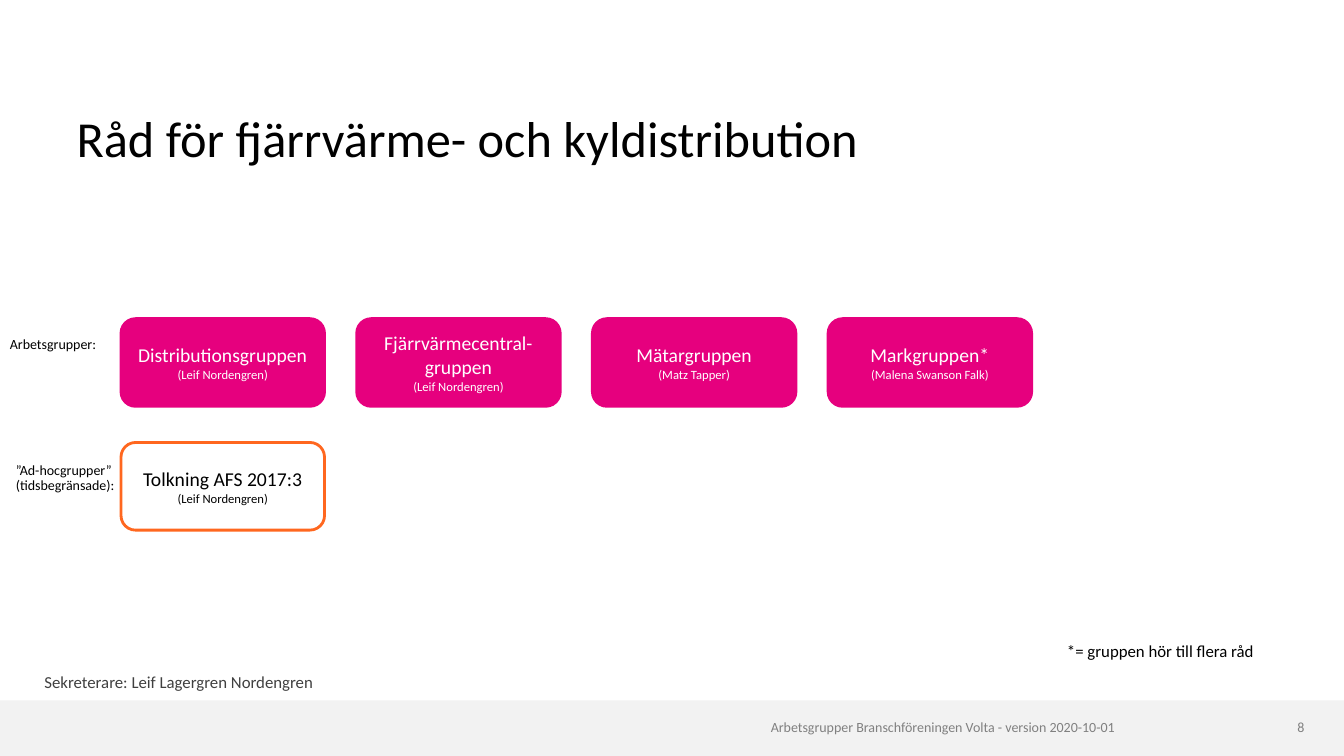
"""Builds the slide on working groups for district heating and cooling distribution."""
from pptx import Presentation
from pptx.dml.color import RGBColor
from pptx.enum.shapes import MSO_SHAPE
from pptx.enum.text import MSO_ANCHOR, PP_ALIGN
from pptx.util import Cm, Pt

RECTANGLE = MSO_SHAPE.RECTANGLE
ROUNDED = MSO_SHAPE.ROUNDED_RECTANGLE
LEFT, CENTER, RIGHT = PP_ALIGN.LEFT, PP_ALIGN.CENTER, PP_ALIGN.RIGHT
TOP, MIDDLE, BOTTOM = MSO_ANCHOR.TOP, MSO_ANCHOR.MIDDLE, MSO_ANCHOR.BOTTOM

FONT = "Calibri"
COLORS = {
    "black": "000000",
    "white": "FFFFFF",
    "dark": "404040",
    "gray": "808080",
    "band": "F2F2F2",
    "pink": "E6007E",
    "orange": "FF671F",
}

GROUP_LEFT, GROUP_TOP, GROUP_PITCH = 3.05, 8.03, 5.94
GROUP_WIDTH, GROUP_HEIGHT = 5.13, 2.21
ADHOC_TOP = 11.15

deck = Presentation()
deck.slide_width, deck.slide_height = Cm(33.87), Cm(19.05)
page = deck.slides.add_slide(deck.slide_layouts[6])


def write(paragraph, text, size, color, align):
    """Fills a paragraph with text in one style."""
    paragraph.text = text
    paragraph.alignment = align
    paragraph.font.name = FONT
    paragraph.font.size = Pt(size)
    paragraph.font.color.rgb = RGBColor.from_string(COLORS[color])


def add_group(left, top, name, leader, fill, line, color):
    """Adds a rounded box with a group name and its leader."""
    box = page.shapes.add_shape(ROUNDED, Cm(left), Cm(top), Cm(GROUP_WIDTH), Cm(GROUP_HEIGHT))
    box.shadow.inherit = False
    if fill:
        box.fill.solid()
        box.fill.fore_color.rgb = RGBColor.from_string(COLORS[fill])
    else:
        box.fill.background()
    box.line.color.rgb = RGBColor.from_string(COLORS[line])
    box.line.width = Pt(2)
    frame = box.text_frame
    frame.word_wrap = True
    frame.vertical_anchor = MIDDLE
    write(frame.paragraphs[0], name, 14, color, CENTER)
    write(frame.add_paragraph(), f"({leader})", 9, color, CENTER)


band = page.shapes.add_shape(RECTANGLE, 0, Cm(17.65), deck.slide_width, Cm(1.4))
band.shadow.inherit = False
band.fill.solid()
band.fill.fore_color.rgb = RGBColor.from_string(COLORS["band"])
band.line.fill.background()

texts = [
    ("Arbetsgrupper Branschföreningen Volta - version 2020-10-01",
     (5.59, 18.11, 22.5, 0.48), 10, "gray", RIGHT, TOP, 1, False),
    ("8", (31.88, 18.11, 0.99, 0.5), 10, "gray", RIGHT, TOP, 1, False),
    ("Råd för fjärrvärme- och kyldistribution",
     (1.93, 1.5, 24.1, 2.72), 36, "black", LEFT, BOTTOM, 0.85, False),
    ("Sekreterare: Leif Lagergren Nordengren",
     (1.12, 16.92, 12.34, 0.58), 12, "dark", LEFT, MIDDLE, 0.97, False),
    ("Arbetsgrupper:", (0, 8.38, 3.07, 0.64), 10, "black", LEFT, TOP, 0.9, True),
    ("”Ad-hocgrupper” (tidsbegränsade):",
     (0.15, 11.56, 3.07, 1.02), 10, "black", LEFT, TOP, 0.9, True),
    ("*= gruppen hör till flera råd",
     (26.64, 16.08, 5.26, 0.71), 12, "black", LEFT, TOP, 0.9, True),
]
for text, place, size, color, align, anchor, spacing, padded in texts:
    box = page.shapes.add_textbox(*map(Cm, place))
    frame = box.text_frame
    frame.word_wrap = True
    frame.vertical_anchor = anchor
    if not padded:
        frame.margin_left = frame.margin_right = frame.margin_top = frame.margin_bottom = 0
    write(frame.paragraphs[0], text, size, color, align)
    frame.paragraphs[0].line_spacing = spacing

groups = [
    ("Distributionsgruppen", "Leif Nordengren"),
    ("Fjärrvärmecentral-gruppen", "Leif Nordengren"),
    ("Mätargruppen", "Matz Tapper"),
    ("Markgruppen*", "Malena Swanson Falk"),
]
for column, (name, leader) in enumerate(groups):
    add_group(GROUP_LEFT + column * GROUP_PITCH, GROUP_TOP, name, leader, "pink", "pink", "white")

add_group(GROUP_LEFT, ADHOC_TOP, "Tolkning AFS 2017:3", "Leif Nordengren", None, "orange", "black")

deck.save("out.pptx")
